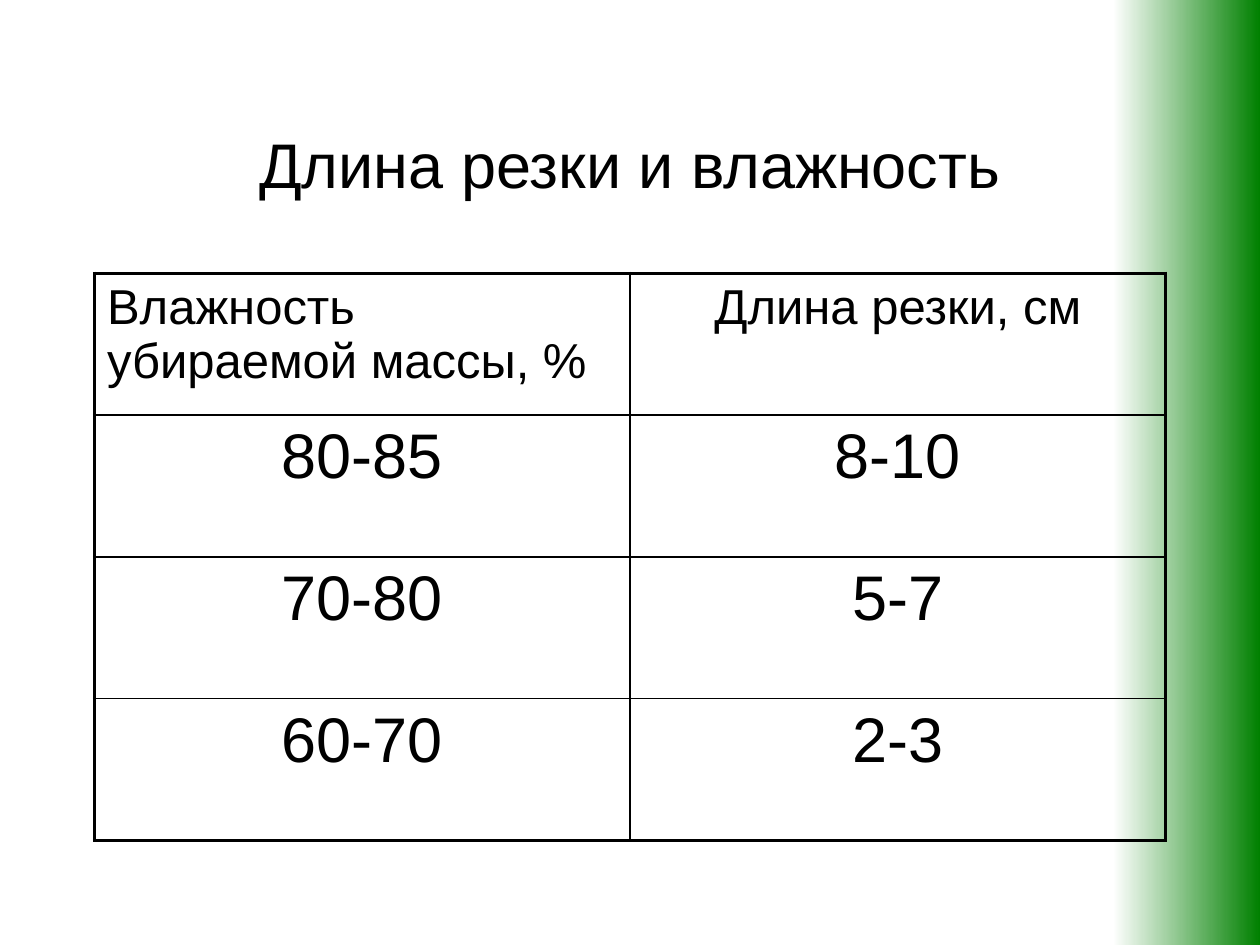
from dataclasses import dataclass

from lxml.etree import SubElement
from pptx import Presentation
from pptx.dml.color import RGBColor
from pptx.enum.shapes import MSO_SHAPE as Shape
from pptx.enum.text import MSO_ANCHOR as Anchor, PP_ALIGN as Align
from pptx.oxml.ns import qn
from pptx.util import Inches, Pt

BLACK, WHITE, GREEN = "000000", "FFFFFF", "008000"
OUTER, INNER = 2.25, 1  # border widths in points


@dataclass
class Entry:
    text: str
    size: int = 36
    align: Align = Align.CENTER


ROWS = [
    [Entry("Влажность убираемой массы, %", 28, Align.LEFT),
     Entry("Длина резки, см", 28)],
    [Entry("80-85"), Entry("8-10")],
    [Entry("70-80"), Entry("5-7")],
    [Entry("60-70"), Entry("2-3")],
]


def color(value: str) -> RGBColor:
    return RGBColor.from_string(value)


def write(frame, entry: Entry) -> None:
    frame.text = entry.text
    frame.word_wrap = True
    paragraph = frame.paragraphs[0]
    paragraph.alignment = entry.align
    font = paragraph.runs[0].font
    font.name, font.size, font.bold = "Arial", Pt(entry.size), False
    font.color.rgb = color(BLACK)


def add_border(cell, side: str, points: float) -> None:
    line = SubElement(cell._tc.get_or_add_tcPr(), qn(f"a:ln{side}"),
                      w=str(Pt(points)))
    fill = SubElement(line, qn("a:solidFill"))
    SubElement(fill, qn("a:srgbClr"), val=BLACK)


def add_grid(slide, rows: list[list[Entry]]) -> None:
    last_row, last_col = len(rows) - 1, len(rows[0]) - 1
    table = slide.shapes.add_table(
        len(rows), len(rows[0]),
        Inches(0.75), Inches(2.17), Inches(8.5), Inches(4.5)).table
    table.first_row = table.horz_banding = False
    for r, row in enumerate(rows):
        for c, entry in enumerate(row):
            cell = table.cell(r, c)
            write(cell.text_frame, entry)
            on_edge = {"L": c == 0, "R": c == last_col,
                       "T": r == 0, "B": r == last_row}
            for side, outer in on_edge.items():
                add_border(cell, side, OUTER if outer else INNER)
            cell.fill.background()


def add_band(slide) -> None:
    band = slide.shapes.add_shape(
        Shape.RECTANGLE, Inches(8.83), 0, Inches(1.17), Inches(7.5))
    band.shadow.inherit = False
    band.line.fill.background()
    band.fill.gradient()
    band.fill.gradient_angle = 0
    for stop, value in zip(band.fill.gradient_stops, (WHITE, GREEN)):
        stop.color.rgb = color(value)
    # Send the band behind the title
    slide.shapes._spTree.insert(2, band._element)


def main() -> None:
    deck = Presentation()
    deck.slide_width, deck.slide_height = Inches(10), Inches(7.5)
    slide = deck.slides.add_slide(deck.slide_layouts[5])
    slide.background.fill.solid()
    slide.background.fill.fore_color.rgb = color(WHITE)

    # Green band on the right
    add_band(slide)

    # Title
    heading = slide.shapes.title
    heading.left, heading.top = Inches(0.75), Inches(0.67)
    heading.width, heading.height = Inches(8.5), Inches(1.25)
    write(heading.text_frame, Entry("Длина резки и влажность"))
    heading.text_frame.vertical_anchor = Anchor.MIDDLE

    # Moisture and cutting length
    add_grid(slide, ROWS)

    deck.save("out.pptx")


if __name__ == "__main__":
    main()
